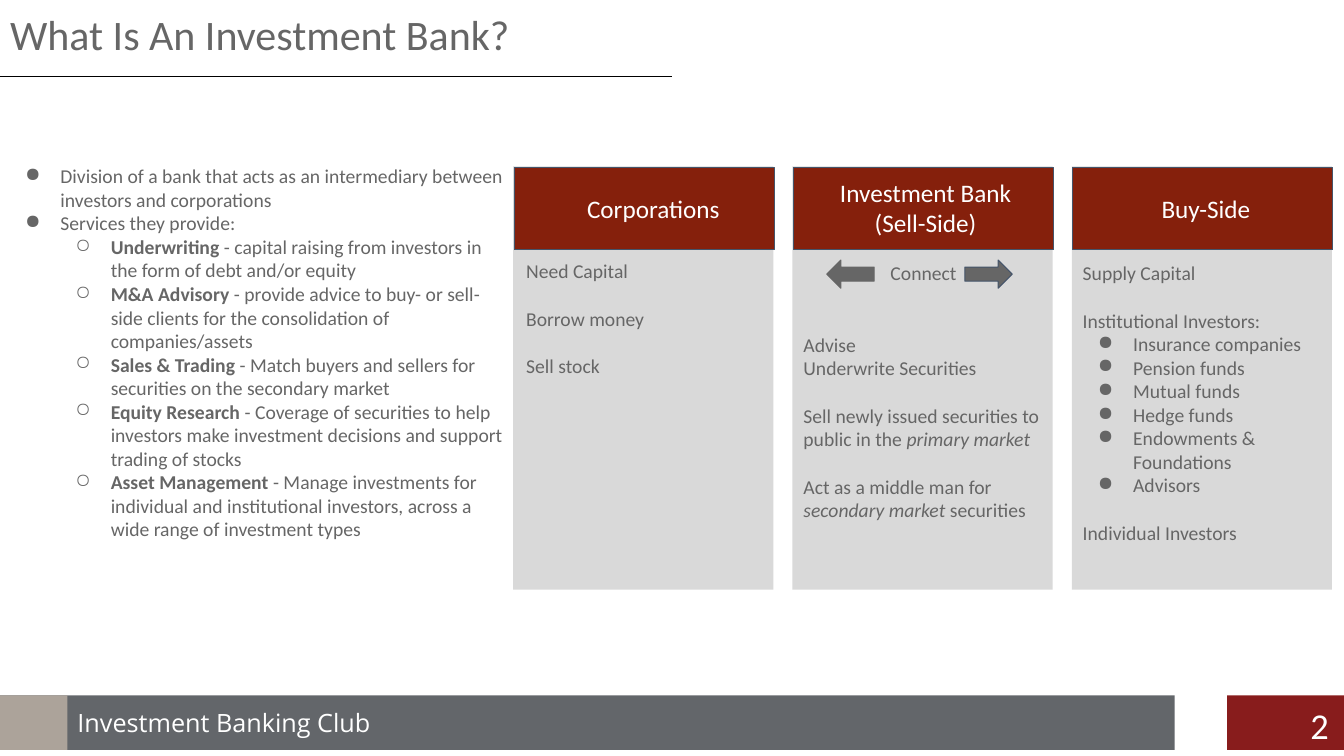
"""Build the slide that explains what an investment bank is."""
from lxml import etree
from pptx import Presentation
from pptx.dml.color import RGBColor
from pptx.enum.shapes import MSO_CONNECTOR, MSO_SHAPE
from pptx.enum.text import MSO_ANCHOR, MSO_AUTO_SIZE, PP_ALIGN
from pptx.oxml.ns import qn
from pptx.util import Pt

PX = 9144
RECTANGLE = MSO_SHAPE.RECTANGLE
LEFT_ARROW, RIGHT_ARROW = MSO_SHAPE.LEFT_ARROW, MSO_SHAPE.RIGHT_ARROW
STRAIGHT = MSO_CONNECTOR.STRAIGHT
LEFT, CENTER, RIGHT = PP_ALIGN.LEFT, PP_ALIGN.CENTER, PP_ALIGN.RIGHT
TOP, NO_FIT = MSO_ANCHOR.TOP, MSO_AUTO_SIZE.NONE
GREY, WHITE, SILVER, MAROON, SLATE = "666666", "FFFFFF", "D9D9D9", "85200C", "44546A"
BULLETS = {1: "●", 2: "○"}
BLANK_LINE = 17.1

color = RGBColor.from_string
deck = Presentation()
deck.slide_width, deck.slide_height = 1333 * PX, 750 * PX
slide = deck.slides.add_slide(deck.slide_layouts[5])
shapes = slide.shapes


def draw(kind, box, fill, line=None):
    """Add a filled preset shape, outlined if a line colour is given."""
    shape = shapes.add_shape(kind, *[PX * side for side in box])
    shape.shadow.inherit = False
    shape.fill.solid()
    shape.fill.fore_color.rgb = color(fill)
    if line:
        shape.line.color.rgb = color(line)
        shape.line.width = Pt(0.75)
    else:
        shape.line.fill.background()


def write(box, paragraphs, size, ink=GREY, align=LEFT, inset=10, font="Calibri",
          emphasis="bold", holder=None):
    """Write (bullet level, blank lines before, text) items; |bars| mark emphasis."""
    left, top, width, height = [PX * side for side in box]
    holder = holder or shapes.add_textbox(left, top, width, height)
    holder.left, holder.top, holder.width, holder.height = left, top, width, height
    frame = holder.text_frame
    frame.word_wrap, frame.auto_size, frame.vertical_anchor = True, NO_FIT, TOP
    frame.margin_left = frame.margin_right = 10 * PX
    frame.margin_top = frame.margin_bottom = inset * PX
    for index, (level, blank_lines, text) in enumerate(paragraphs):
        paragraph = frame.add_paragraph() if index else frame.paragraphs[0]
        paragraph.alignment = LEFT if index and emphasis == "italic" else align
        if blank_lines:
            paragraph.space_before = Pt(blank_lines * BLANK_LINE)
        if level:
            properties = paragraph._p.get_or_add_pPr()
            properties.set("marL", str(50 * level * PX))
            properties.set("indent", str(-35 * PX))
            bullet_color = etree.SubElement(properties, qn("a:buClr"))
            etree.SubElement(bullet_color, qn("a:srgbClr"), val=GREY)
            etree.SubElement(properties, qn("a:buChar"), char=BULLETS[level])
            paragraph.level = level - 1
        for part, words in enumerate(text.split("|")):
            if words:
                run = paragraph.add_run()
                run.text = words
                run.font.name, run.font.size = font, Pt(size)
                run.font.color.rgb = color(ink)
                if part % 2:
                    setattr(run.font, emphasis, True)


write((0, -2, 667, 71), [(0, 0, "What Is An Investment Bank?")], 30, holder=shapes.title)
title_rule = shapes.add_connector(STRAIGHT, 0, 76 * PX, 667 * PX, 76 * PX)
title_rule.line.color.rgb = color("000000")
title_rule.line.width = Pt(0.75)
etree.SubElement(title_rule._element.spPr, qn("a:effectLst"))

for left, width, fill in [(0, 1165, "63666A"), (1217, 116, "881C1C"), (0, 67, "ACA39A")]:
    draw(RECTANGLE, (left, 690, width, 54), fill)
write((67, 697, 1098, 40), [(0, 0, "Investment Banking Club")], 18, WHITE, inset=5,
      font="Open Sans")
write((1248, 693, 80, 57), [(0, 0, "2")], 26, WHITE, RIGHT, inset=5)

services = [
    (1, 0, "Division of a bank that acts as an intermediary between investors and corporations"),
    (1, 0, "Services they provide:"),
    (2, 0, "|Underwriting| - capital raising from investors in the form of debt and/or equity"),
    (2, 0, "|M&A Advisory| - provide advice to buy- or sell-side clients for the "
           "consolidation of companies/assets"),
    (2, 0, "|Sales & Trading| - Match buyers and sellers for securities on the "
           "secondary market"),
    (2, 0, "|Equity Research |- Coverage of securities to help investors make investment "
           "decisions and support trading of stocks"),
    (2, 0, "|Asset Management| - Manage investments for individual and institutional "
           "investors, across a wide range of investment types"),
]
write((0, 153, 509, 397), services, 14)

corporation_needs = [(0, 0, "Need Capital"), (0, 1, "Borrow money"), (0, 1, "Sell stock")]
bank_roles = [
    (0, 0, "Connect"),
    (0, 2, "Advise"),
    (0, 0, "Underwrite Securities"),
    (0, 1, "Sell newly issued securities to public in the |primary market|"),
    (0, 1, "Act as a middle man for |secondary market| securities"),
]
institutions = ["Insurance companies", "Pension funds", "Mutual funds", "Hedge funds",
                "Endowments & Foundations", "Advisors"]
buy_side = [
    (0, 0, "Supply Capital"),
    (0, 1, "Institutional Investors:"),
    *[(1, 0, institution) for institution in institutions],
    (0, 1, "Individual Investors"),
]
columns = [
    (["Corporations"], (519, 182, 258, 50), corporation_needs, (512, 247, 256, 138), LEFT),
    (["Investment Bank", "(Sell-Side)"], (789, 166, 258, 81), bank_roles,
     (787, 249, 258, 279), CENTER),
    (["Buy-Side"], (1067, 182, 258, 50), buy_side, (1064, 249, 258, 327), LEFT),
]
for number, (heading, heading_box, details, details_box, first_align) in enumerate(columns):
    column_left = 509 + 277 * number
    draw(RECTANGLE, (column_left, 165, 258, 420), SILVER)
    draw(RECTANGLE, (column_left + 1, 166, 258, 82), MAROON, SLATE)
    write(heading_box, [(0, 0, line) for line in heading], 18, WHITE, CENTER)
    write(details_box, details, 14, align=first_align, emphasis="italic")

draw(RIGHT_ARROW, (957, 258, 47, 28), GREY, SLATE)
draw(LEFT_ARROW, (820, 258, 47, 28), GREY, GREY)

deck.save("out.pptx")
